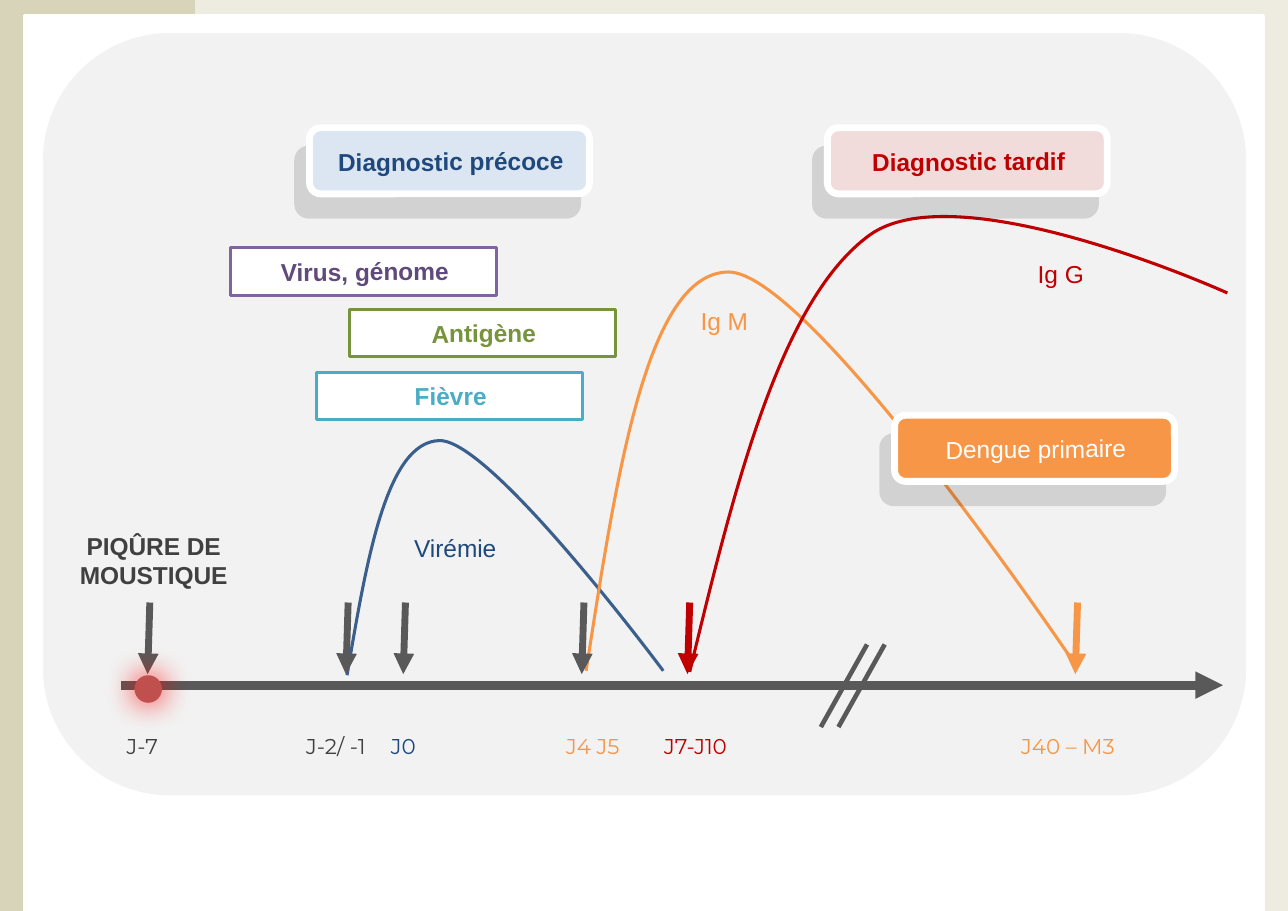
from pptx import Presentation, util as u
from pptx.dml.color import RGBColor
from pptx.enum import shapes, text
from pptx.oxml import ns
from lxml import etree

PX = 9144  # one px is a hundredth of an inch
WHITE = RGBColor(0xFF, 0xFF, 0xFF)
KHAKI = RGBColor(0xD8, 0xD4, 0xBA)
CREAM = RGBColor(0xEE, 0xEC, 0xE1)
PALE = RGBColor(0xF2, 0xF2, 0xF2)
GREY = RGBColor(0x59, 0x59, 0x59)
DARK = RGBColor(0x40, 0x40, 0x40)
RED = RGBColor(0xC0, 0x00, 0x00)
BRICK = RGBColor(0xC0, 0x50, 0x4D)
ROSE = RGBColor(0xF2, 0xDC, 0xDB)
NAVY = RGBColor(0x1F, 0x49, 0x7D)
BLUE = RGBColor(0x3A, 0x5F, 0x8C)
SKY = RGBColor(0xDC, 0xE6, 0xF2)
ORANGE = RGBColor(0xF7, 0x96, 0x46)
VIOLET = RGBColor(0x80, 0x64, 0xA2)
PLUM = RGBColor(0x60, 0x4A, 0x7B)
GREEN = RGBColor(0x77, 0x93, 0x3C)
TEAL = RGBColor(0x4B, 0xAC, 0xC6)

RECT = shapes.MSO_SHAPE.RECTANGLE
ROUND = shapes.MSO_SHAPE.ROUNDED_RECTANGLE
OVAL = shapes.MSO_SHAPE.OVAL

BODY = {"name": "Arial", "size": u.Pt(16), "bold": False}
BOLD = {**BODY, "bold": True}
DAY = {"name": "Montserrat", "size": u.Pt(14), "bold": False}

CAST = {"color": "000000", "alpha": 13, "blurRad": 0, "dist": 16, "dir": 119}
GLOW = {"color": "FF0000", "alpha": 100, "blurRad": 21, "dist": 0, "dir": 0}


def add_sub(node, tag, **attrs):
    return etree.SubElement(node, ns.qn(tag), {k: str(v) for k, v in attrs.items()})


def add_shape(slide, kind, box, fill, line=None, width=2, shade=None):
    shape = slide.shapes.add_shape(kind, *[n * PX for n in box])
    shape.fill.solid()
    shape.fill.fore_color.rgb = fill
    if line is None:
        shape.line.fill.background()
    else:
        shape.line.color.rgb = line
        shape.line.width = u.Pt(width)
    shape.shadow.inherit = False
    if shade:
        effects = shape._element.spPr.find(ns.qn("a:effectLst"))
        cast = add_sub(effects, "a:outerShdw", blurRad=shade["blurRad"] * 12700,
                       dist=shade["dist"] * 12700, dir=shade["dir"] * 60000,
                       algn="ctr", rotWithShape=0)
        tint = add_sub(cast, "a:srgbClr", val=shade["color"])
        add_sub(tint, "a:alpha", val=shade["alpha"] * 1000)


def add_text(slide, words, box, style, color, center=False):
    shape = slide.shapes.add_textbox(*[n * PX for n in box])
    shape.text_frame.word_wrap = True
    para = shape.text_frame.paragraphs[0]
    para.alignment = text.PP_ALIGN.CENTER if center else text.PP_ALIGN.LEFT
    run = para.add_run()
    run.text = words
    for key, value in style.items():
        setattr(run.font, key, value)
    run.font.color.rgb = color
    return shape


def add_card(slide, words, box, color, style=BOLD, **look):
    """A box grouped with a wide, slightly tilted label at its centre."""
    left, top, width, high = box
    group = slide.shapes.add_group_shape()
    add_shape(group, box=box, **look)
    spot = (left + (width - 458) // 2 + 1, top + high // 2 - 18, 458, 36)
    label = add_text(group, words, spot, style, color, center=True)
    label.rotation = 359.5


def add_line(slide, start, end, color, width, arrow=False):
    line = slide.shapes.add_connector(
        shapes.MSO_CONNECTOR.STRAIGHT, *[n * PX for n in start + end])
    line.line.color.rgb = color
    line.line.width = u.Pt(width)
    if arrow:
        add_sub(line.line._get_or_add_ln(), "a:tailEnd", type="triangle")
    add_sub(line._element.spPr, "a:effectLst")


def add_curve(slide, start, points, color):
    """A smooth outline: every three points are two handles and an end."""
    build = slide.shapes.build_freeform(*start, scale=PX)
    build.add_line_segments(points, close=False)
    curve = build.convert_to_shape()
    legs = list(curve._element.spPr.iter(ns.qn("a:lnTo")))
    for i in range(0, len(legs), 3):
        bend = add_sub(legs[i].getparent(), "a:cubicBezTo")
        for leg in legs[i:i + 3]:
            bend.append(leg[0])
            leg.getparent().remove(leg)
    curve.fill.background()
    curve.line.color.rgb = color
    curve.line.width = u.Pt(2)
    curve.shadow.inherit = False


def main():
    deck = Presentation()
    deck.slide_width, deck.slide_height = 1169 * PX, 827 * PX
    slide = deck.slides.add_slide(deck.slide_layouts[6])

    # Frame and panel
    frame = slide.shapes.add_group_shape()
    add_shape(frame, RECT, (0, -11, 177, 838), KHAKI)
    add_shape(frame, RECT, (177, -11, 992, 838), CREAM)
    add_shape(slide, RECT, (22, 14, 1125, 950), WHITE, WHITE)
    add_shape(slide, ROUND, (39, 30, 1092, 692), PALE)

    # Time axis
    add_line(slide, (110, 622), (1110, 622), GREY, 6, arrow=True)

    # Curves
    add_curve(slide, (315, 613), [(333, 507), (351, 401), (399, 400),
                                  (446, 399), (602, 609), (602, 609)], BLUE)
    add_curve(slide, (532, 609), [(560, 429), (587, 248), (661, 247),
                                  (735, 246), (975, 602), (975, 602)], ORANGE)
    add_curve(slide, (626, 610), [(667, 440), (709, 271), (790, 213),
                                  (871, 156), (1114, 266), (1114, 266)], RED)

    # Day arrows, bite point and axis break
    for x, color in ((136, GREY), (316, GREY), (368, GREY), (530, GREY),
                     (626, RED), (978, ORANGE)):
        add_line(slide, (x, 547), (x - 2, 612), color, 4.5, arrow=True)
    add_shape(slide, OVAL, (122, 613, 25, 25), BRICK, shade=GLOW)
    for x in (787, 803):
        add_line(slide, (x, 585), (x - 42, 660), GREY, 3)

    # Day labels
    for words, x, width, color in (
            ("J-7", 105, 61, DARK), ("J-2/ -1", 268, 95, DARK),
            ("J0", 345, 74, NAVY), ("J4 J5", 504, 83, ORANGE),
            ("J7-J10", 593, 99, RED), ("J40 – M3", 917, 114, ORANGE)):
        add_text(slide, words, (x, 661, width, 33), DAY, color)

    # Curve labels
    add_text(slide, "PIQÛRE DE MOUSTIQUE", (52, 477, 175, 63), BOLD, DARK, center=True)
    for words, x, y, color in (("Virémie", 366, 479, NAVY),
                               ("Ig M", 626, 273, ORANGE), ("Ig G", 932, 230, RED)):
        add_text(slide, words, (x, y, 132, 36), BODY, color)

    # Raised cards
    for words, x, y, color, fill, style in (
            ("Dengue primaire", 812, 377, WHITE, ORANGE, BODY),
            ("Diagnostic précoce", 281, 116, NAVY, SKY, BOLD),
            ("Diagnostic tardif", 751, 116, RED, ROSE, BOLD)):
        add_card(slide, words, (x, y, 254, 60), color, style, kind=ROUND,
                 fill=fill, line=WHITE, width=4.5, shade=CAST)

    # Marker cards
    for words, x, y, color, line in (("Virus, génome", 209, 225, PLUM, VIOLET),
                                     ("Antigène", 317, 281, GREEN, GREEN),
                                     ("Fièvre", 287, 338, TEAL, TEAL)):
        add_card(slide, words, (x, y, 242, 43), color, kind=RECT, fill=WHITE, line=line)

    deck.save("out.pptx")


if __name__ == "__main__":
    main()
